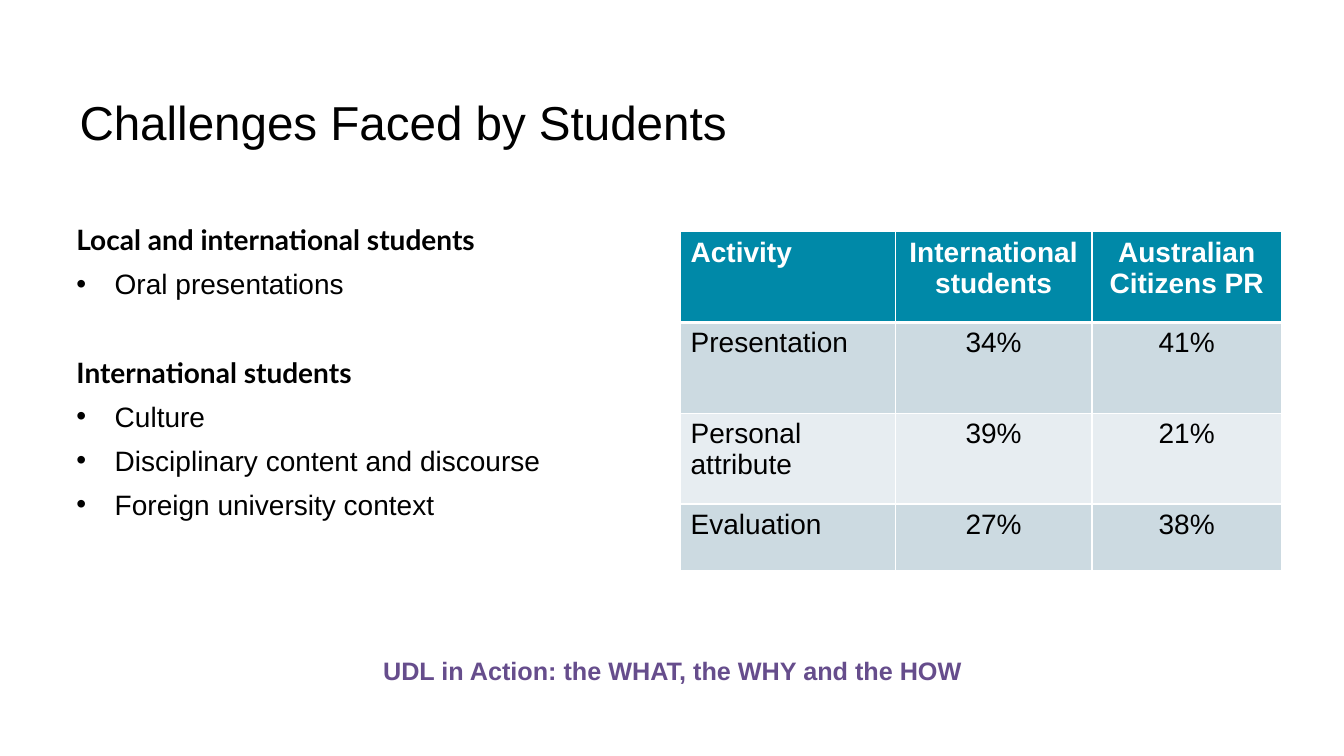
from dataclasses import dataclass

from lxml.etree import SubElement
from pptx import Presentation
from pptx.dml.color import RGBColor
from pptx.enum.text import PP_ALIGN
from pptx.oxml.ns import qn
from pptx.util import Inches, Pt


@dataclass(frozen=True)
class Theme:
    body_font: str = "Arial"
    heading_font: str = "Lato"
    title_size: float = 34
    body_size: float = 20
    tagline_size: float = 18
    black: str = "000000"
    white: str = "FFFFFF"
    purple: str = "664D8C"
    header_fill: str = "0089A8"
    band_fills: tuple = ("CCDAE1", "E7EDF1")


THEME = Theme()

# Heading of each group, then its bullet points
CHALLENGES = [
    ("Local and international students", ["Oral presentations"]),
    ("International students", ["Culture", "Disciplinary content and discourse",
                                "Foreign university context"]),
]
ACTIVITY_ROWS = [
    ("Activity", "International students", "Australian Citizens PR"),
    ("Presentation", "34%", "41%"),
    ("Personal attribute", "39%", "21%"),
    ("Evaluation", "27%", "38%"),
]
COLUMN_WIDTHS = (2.13, 1.95, 1.88)
ROW_HEIGHTS = (0.9, 0.9, 0.9, 0.66)


def write(paragraph, text, *, size=THEME.body_size, font=THEME.body_font,
          color=THEME.black, bold=False, align=PP_ALIGN.LEFT, before=0, line=None):
    paragraph.alignment = align
    paragraph.space_before = Pt(before)
    if line:
        paragraph.line_spacing = line
    run = paragraph.add_run()
    run.text = text
    run.font.size = Pt(size)
    run.font.name = font
    run.font.bold = bold
    run.font.color.rgb = RGBColor.from_string(color)


def add_text_frame(slide, left, top, width, height, wrap=True):
    frame = slide.shapes.add_textbox(
        Inches(left), Inches(top), Inches(width), Inches(height)).text_frame
    frame.word_wrap = wrap
    return frame


def add_bullet(paragraph, indent=0.38):
    properties = paragraph._p.get_or_add_pPr()
    properties.set("marL", str(Inches(indent)))
    properties.set("indent", str(-Inches(indent)))
    SubElement(properties, qn("a:buFont"), typeface=THEME.body_font)
    SubElement(properties, qn("a:buChar"), char="•")


def add_challenges(slide, groups):
    frame = add_text_frame(slide, 0.66, 2.16, 6.24, 4.3)
    for index, (heading, points) in enumerate(groups):
        paragraph = frame.add_paragraph() if index else frame.paragraphs[0]
        write(paragraph, heading, font=THEME.heading_font, bold=True,
              before=39 if index else 0)
        for point in points:
            paragraph = frame.add_paragraph()
            add_bullet(paragraph)
            write(paragraph, point, before=7.5)


def set_borders(cell, **widths):
    properties = cell._tc.get_or_add_tcPr()
    # Border lines come before the fill in a cell's properties
    for position, side in enumerate("LRTB"):
        border = SubElement(properties, qn(f"a:ln{side}"), w=str(Pt(widths.get(side, 1))))
        fill = SubElement(border, qn("a:solidFill"))
        SubElement(fill, qn("a:srgbClr"), val=THEME.white)
        properties.insert(position, border)


def add_activity_table(slide, rows):
    table = slide.shapes.add_table(
        len(rows), len(COLUMN_WIDTHS), Inches(6.75), Inches(2.3),
        Inches(sum(COLUMN_WIDTHS)), Inches(sum(ROW_HEIGHTS))).table
    for column, width in zip(table.columns, COLUMN_WIDTHS):
        column.width = Inches(width)
    for row_index, (values, height) in enumerate(zip(rows, ROW_HEIGHTS)):
        table.rows[row_index].height = Inches(height)
        header = row_index == 0
        fill = THEME.header_fill if header else THEME.band_fills[(row_index - 1) % 2]
        for column_index, value in enumerate(values):
            cell = table.cell(row_index, column_index)
            cell.fill.solid()
            cell.fill.fore_color.rgb = RGBColor.from_string(fill)
            set_borders(cell, B=3 if header else 1, T=3 if row_index == 1 else 1)
            write(cell.text_frame.paragraphs[0], value, bold=header,
                  color=THEME.white if header else THEME.black,
                  align=PP_ALIGN.CENTER if column_index else PP_ALIGN.LEFT)


def main():
    presentation = Presentation()
    presentation.slide_width = Inches(13.33)
    presentation.slide_height = Inches(7.5)
    slide = presentation.slides.add_slide(presentation.slide_layouts[6])

    # Title
    title = add_text_frame(slide, 0.69, 0.94, 11.98, 1.09)
    write(title.paragraphs[0], "Challenges Faced by Students",
          size=THEME.title_size, line=0.9)

    # Challenges on the left, activity figures on the right
    add_challenges(slide, CHALLENGES)
    add_activity_table(slide, ACTIVITY_ROWS)

    # Tagline
    tagline = add_text_frame(slide, 3.67, 6.45, 6, 0.4, wrap=False)
    write(tagline.paragraphs[0], "UDL in Action: the WHAT, the WHY and the HOW",
          size=THEME.tagline_size, color=THEME.purple, bold=True, align=PP_ALIGN.CENTER)

    presentation.save("out.pptx")


if __name__ == "__main__":
    main()
